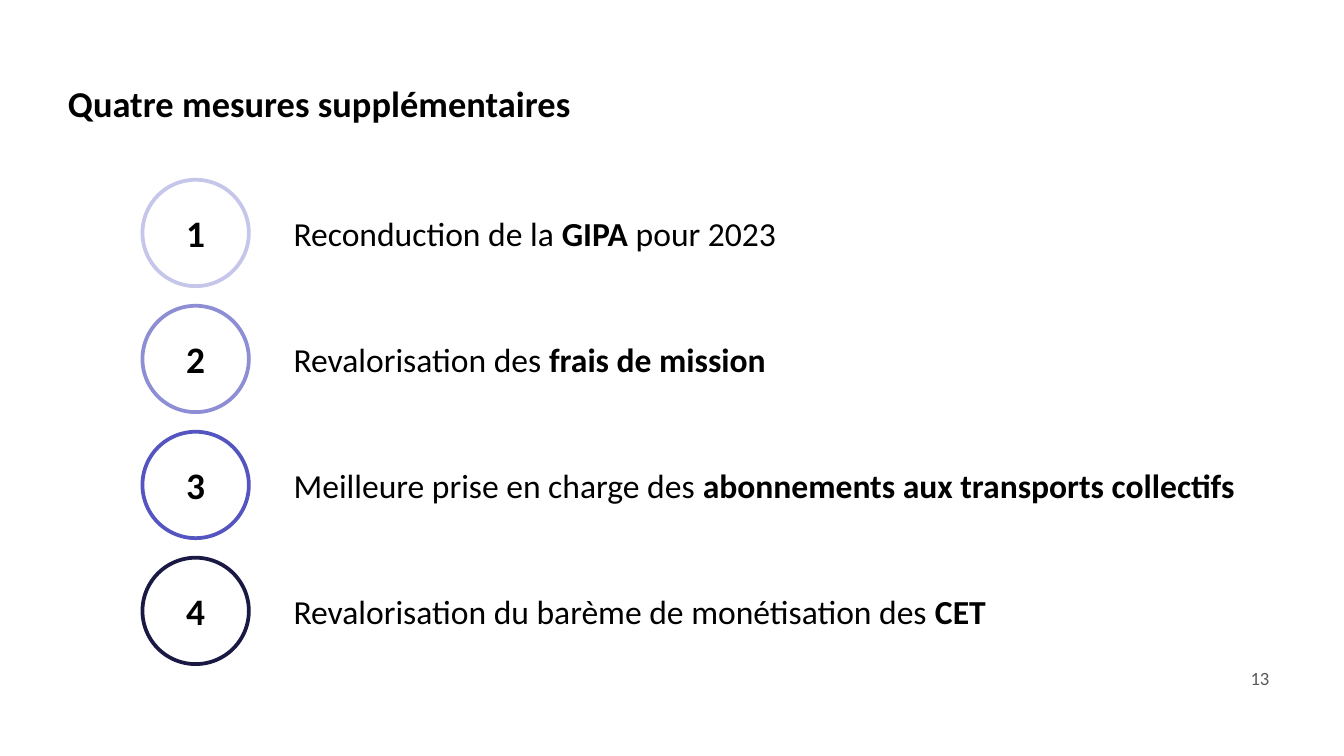
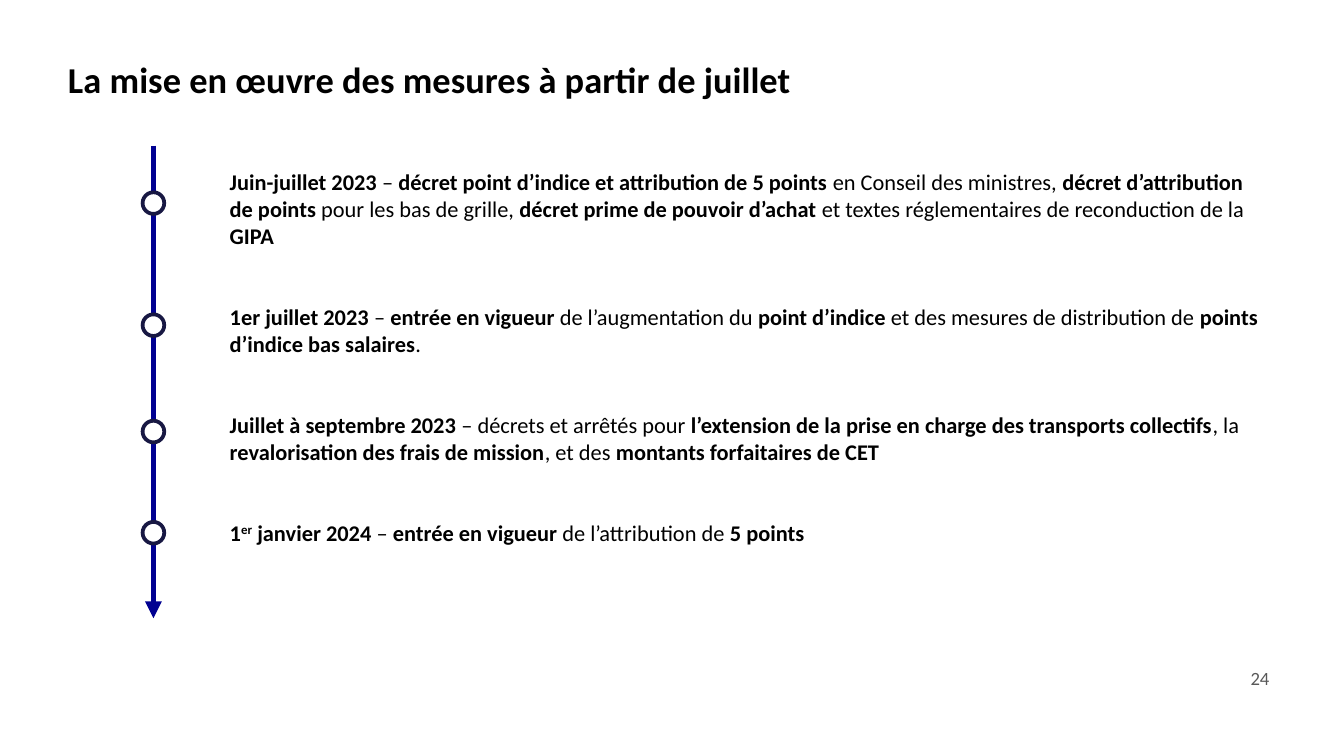
from lxml.etree import SubElement
from pptx import Presentation
from pptx.dml.color import RGBColor
from pptx.enum.shapes import MSO_CONNECTOR, MSO_SHAPE
from pptx.enum.text import MSO_ANCHOR, PP_ALIGN
from pptx.oxml.ns import qn
from pptx.util import Pt

FONT = "Calibri"
BLACK = RGBColor(0x00, 0x00, 0x00)
WHITE = RGBColor(0xFF, 0xFF, 0xFF)
GREY = RGBColor(0x59, 0x59, 0x59)
ARROW_BLUE = RGBColor(0x00, 0x00, 0x91)
MARKER_BLUE = RGBColor(0x18, 0x18, 0x43)
RING_COLOURS = [
    RGBColor(0xC6, 0xC6, 0xEA),
    RGBColor(0x8E, 0x8E, 0xD5),
    RGBColor(0x55, 0x55, 0xC1),
    RGBColor(0x19, 0x19, 0x44),
]

MEASURES = [  # text, label width
    ("Reconduction de la **GIPA** pour 2023", 499),
    ("Revalorisation des **frais de mission**", 499),
    ("Meilleure prise en charge des **abonnements aux transports collectifs**", 538.5),
    ("Revalorisation du barème de monétisation des **CET**", 499),
]
STEPS = [
    "**Juin-juillet 2023 **– **décret point d’indice et attribution de 5 points **"
    "en Conseil des ministres, **décret d’attribution de points** pour les bas de "
    "grille, **décret prime de pouvoir d’achat **et textes réglementaires de "
    "reconduction de la **GIPA**",
    "**1er juillet 2023 **– **entrée en vigueur **de l’augmentation du "
    "**point d’indice** et des mesures de distribution de "
    "**points d’indice bas salaires**.",
    "**Juillet à septembre 2023** – décrets et arrêtés pour "
    "**l’extension de la prise en charge des transports collectifs**, la "
    "**revalorisation des frais de mission**, et des "
    "**montants forfaitaires de CET**",
    "**1^er^ janvier 2024 **– **entrée en vigueur **de l’attribution de **5 points**",
]
MARKER_CENTRES = [108.8, 174.2, 231.2, 285.4]


class SlideBuilder:
    def __init__(self, deck):
        self.deck = deck
        self.slide = None

    def start(self, title, top, width, number):
        self.slide = self.deck.slides.add_slide(self.deck.slide_layouts[5])
        box = self.slide.shapes.title
        box.left, box.top, box.width, box.height = Pt(31), Pt(top), Pt(width), Pt(57.5)
        frame = box.text_frame
        frame.margin_left = frame.margin_right = Pt(5.4)
        frame.margin_top = frame.margin_bottom = Pt(2.7)
        frame.vertical_anchor = MSO_ANCHOR.MIDDLE
        para = frame.paragraphs[0]
        para.alignment, para.line_spacing = PP_ALIGN.LEFT, 0.9
        self.add_spans(para, f"**{title}**", 19.5)
        footer = self.text_box(659.5, 353.5, 31, 19.5).paragraphs[0]
        footer.alignment = PP_ALIGN.CENTER
        self.add_spans(footer, str(number), 10, GREY)

    def add_spans(self, para, text, size, colour=BLACK):
        """Add runs: **...** marks bold, ^...^ marks superscript."""
        for bold_index, piece in enumerate(text.split("**")):
            for raised_index, part in enumerate(piece.split("^")):
                if not part:
                    continue
                span = para.add_run()
                span.text = part
                span.font.name, span.font.size = FONT, Pt(size)
                span.font.bold = bold_index % 2 == 1
                span.font.color.rgb = colour
                if raised_index % 2:
                    span.font._element.set("baseline", "30000")

    def text_box(self, left, top, width, height):
        box = self.slide.shapes.add_textbox(Pt(left), Pt(top), Pt(width), Pt(height))
        box.text_frame.word_wrap = True
        return box.text_frame

    def shape(self, kind, left, top, width, height, line=None):
        """Add a white shape, outlined only if a line colour is given."""
        shape = self.slide.shapes.add_shape(kind, Pt(left), Pt(top), Pt(width), Pt(height))
        shape.shadow.inherit = False
        shape.fill.solid()
        shape.fill.fore_color.rgb = WHITE
        if line is None:
            shape.line.fill.background()
        else:
            shape.line.color.rgb = line
            shape.line.width = Pt(2)
        return shape

    def circle(self, centre_x, centre_y, size, line):
        return self.shape(MSO_SHAPE.OVAL, centre_x - size / 2, centre_y - size / 2,
                          size, size, line)

    def label(self, shape, text, size, alignment):
        shape.text_frame.vertical_anchor = MSO_ANCHOR.MIDDLE
        para = shape.text_frame.paragraphs[0]
        para.alignment = alignment
        self.add_spans(para, text, size)

    def down_arrow(self, x, top, bottom):
        arrow = self.slide.shapes.add_connector(
            MSO_CONNECTOR.STRAIGHT, Pt(x), Pt(top), Pt(x), Pt(bottom))
        arrow.line.color.rgb = ARROW_BLUE
        arrow.line.width = Pt(3)
        properties = arrow._element.spPr
        SubElement(properties.find(qn("a:ln")), qn("a:tailEnd"), type="triangle")
        SubElement(properties, qn("a:effectLst"))


def add_measures(builder):
    builder.start("Quatre mesures supplémentaires", 28, 607.5, 13)
    for index, ((text, width), colour) in enumerate(zip(MEASURES, RING_COLOURS)):
        centre = 124.8 + 67.5 * index
        ring = builder.circle(104.8, centre, 57, colour)
        builder.label(ring, f"**{index + 1}**", 20, PP_ALIGN.CENTER)
        row = builder.shape(MSO_SHAPE.RECTANGLE, 150.2, centre - 28.5, width, 57)
        builder.label(row, text, 18, PP_ALIGN.LEFT)


def add_timeline(builder):
    builder.start("La mise en œuvre des mesures à partir de juillet", 15, 556, 24)
    frame = builder.text_box(116, 86.6, 565, 225)
    for index, step in enumerate(STEPS):
        para = frame.add_paragraph() if index else frame.paragraphs[0]
        if index:
            para.space_before = Pt(29)
        builder.add_spans(para, step, 12)
    builder.down_arrow(82.2, 78, 331.2)
    for centre in MARKER_CENTRES:
        builder.circle(82.2, centre, 11.6, MARKER_BLUE)


def main():
    deck = Presentation()
    deck.slide_width, deck.slide_height = Pt(720), Pt(405)
    builder = SlideBuilder(deck)
    add_measures(builder)
    add_timeline(builder)
    deck.save("out.pptx")


if __name__ == "__main__":
    main()
